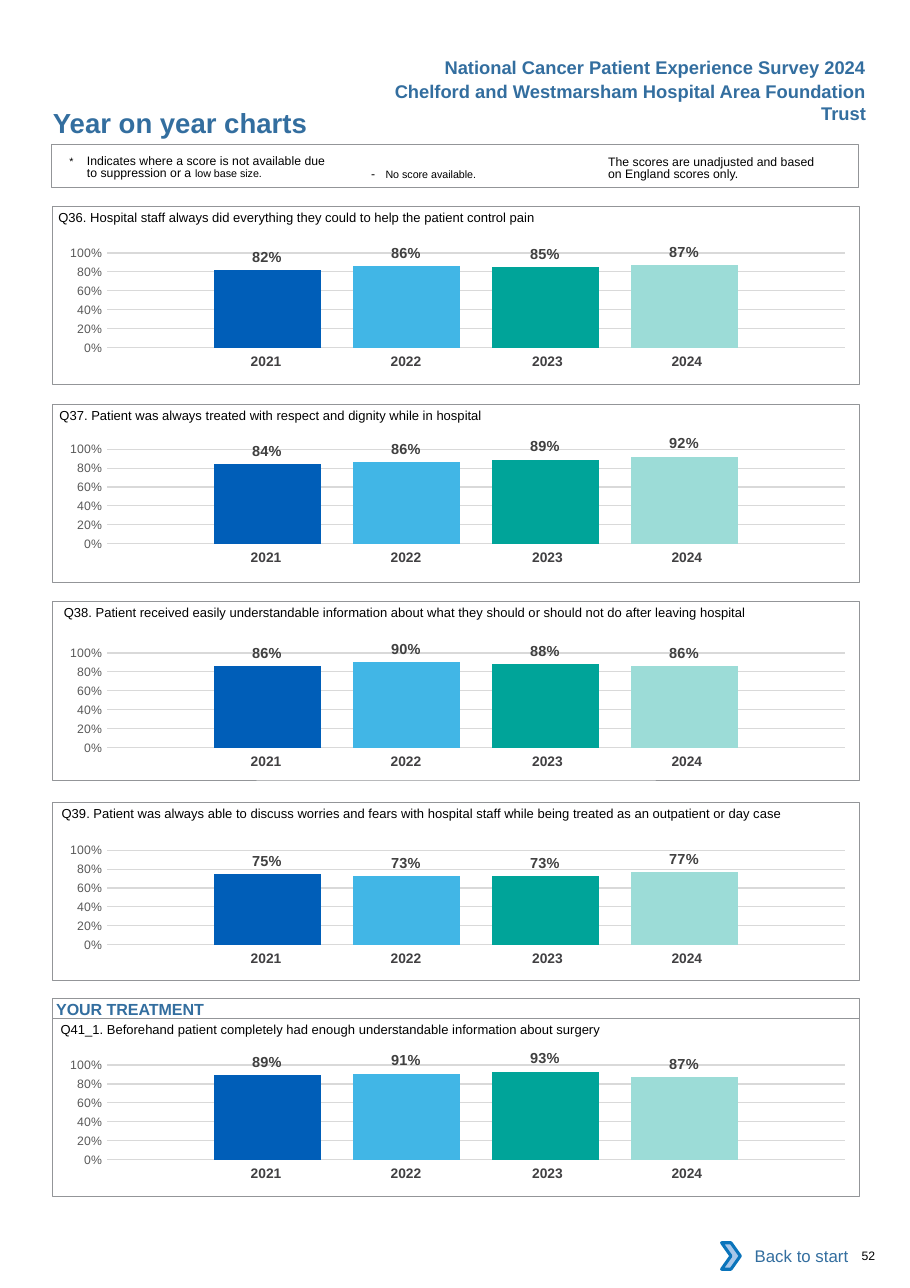
from pptx import Presentation
from pptx.chart.data import CategoryChartData
from pptx.dml.color import RGBColor
from pptx.enum.chart import XL_CHART_TYPE as ChartType, XL_LABEL_POSITION as LabelPos, XL_TICK_MARK as Tick
from pptx.enum.shapes import MSO_SHAPE as Shape
from pptx.enum.text import MSO_ANCHOR as Anchor, PP_ALIGN as Align
from pptx.oxml import parse_xml
from pptx.oxml.ns import nsdecls, qn
from pptx.util import Inches, Pt

BLUE, BLACK, GREY = "336E9F", "000000", "939598"
HEADERS = [
    ("National Cancer Patient Experience Survey 2024", 0.46),
    ("Chelford and Westmarsham Hospital Area Foundation Trust", 0.68),
]
# runs of (text, size), left, top, width, hanging indent
NOTES = [
    ([("*\t", 7), ("Indicates where a score is not available due to suppression or a ", 8),
      ("low base size.", 7)], 0.63, 1.38, 2.4, 0.16),
    ([("-\t", 8), ("No score available.", 7)], 3.37, 1.5, 1.83, 0.13),
    ([("The scores are unadjusted and based on England scores only.", 8)], 5.52, 1.39, 1.97, 0),
]
YEARS = {"2021": "005EB8", "2022": "41B6E6", "2023": "00A499", "2024": "9CDCD7"}
YEAR_COLUMNS = [(1.27, 0), (1.27, 0), (1.34, 0.04), (1.27, 0.12)]  # width, right margin
# question, scores, frame top, chart top, question left
QUESTIONS = [
    ("Q36. Hospital staff always did everything they could to help the patient control pain",
     (0.82, 0.86, 0.85, 0.87), 1.87, 2.11, 0.53),
    ("Q37. Patient was always treated with respect and dignity while in hospital",
     (0.84, 0.86, 0.89, 0.92), 3.67, 3.89, 0.54),
    ("Q38. Patient received easily understandable information about what they should or should not do "
     "after leaving hospital", (0.86, 0.9, 0.88, 0.86), 5.46, 5.74, 0.58),
    ("Q39. Patient was always able to discuss worries and fears with hospital staff while being treated "
     "as an outpatient or day case", (0.75, 0.73, 0.73, 0.77), 7.28, 7.53, 0.56),
    ("Q41_1. Beforehand patient completely had enough understandable information about surgery",
     (0.89, 0.91, 0.93, 0.87), 9.24, 9.48, 0.55),
]
FRAME_LEFT, FRAME_WIDTH, FRAME_HEIGHT = 0.48, 7.32, 1.62
PLOT = {"x": 0.079, "y": 0.145, "w": 0.915, "h": 0.666}
NO_TABLE_STYLE = "{2D5ABB26-0587-4C30-8999-92F81FD0307C}"

prs = Presentation()
prs.slide_width, prs.slide_height = Inches(8.26), Inches(11.69)
slide = prs.slides.add_slide(prs.slide_layouts[5])
shapes = slide.shapes


def rgb(hex_color):
    return RGBColor.from_string(hex_color)


def style_font(font, size, color=BLACK, bold=False, name="Arial"):
    for key, value in {"size": Pt(size), "bold": bold, "name": name}.items():
        setattr(font, key, value)
    font.color.rgb = rgb(color)


def write(frame, text, size, color=BLACK, bold=False, align=Align.LEFT, anchor=Anchor.TOP,
          margins=(0, 0, 0, 0), wrap=True):
    """Fill a text frame with one line or with (text, size) runs; return its paragraph."""
    for side, margin in zip(("left", "top", "right", "bottom"), margins):
        setattr(frame, f"margin_{side}", Inches(margin))
    frame.word_wrap, frame.vertical_anchor = wrap, anchor
    paragraph = frame.paragraphs[0]
    paragraph.alignment = align
    for part, part_size in ([(text, size)] if isinstance(text, str) else text):
        run = paragraph.add_run()
        run.text = part
        style_font(run.font, part_size, color, bold)
    return paragraph


def add_text(box, text, size, **formats):
    return write(shapes.add_textbox(*map(Inches, box)).text_frame, text, size, **formats)


def add_outline(box, preset=Shape.RECTANGLE, fill=None, line=GREY, width=0.5):
    shape = shapes.add_shape(preset, *map(Inches, box))
    shape.shadow.inherit = False
    if fill:
        shape.fill.solid()
        shape.fill.fore_color.rgb = rgb(fill)
    else:
        shape.fill.background()
    if line:
        shape.line.color.rgb = rgb(line)
        shape.line.width = Pt(width)
    else:
        shape.line.fill.background()
    return shape


def add_year_labels(top):
    total = sum(width for width, _ in YEAR_COLUMNS)
    table = shapes.add_table(1, len(YEARS), *map(Inches, (1.73, top, total, 0.27))).table
    table.first_row = table.horz_banding = False
    table._tbl.tblPr.find(qn("a:tableStyleId")).text = NO_TABLE_STYLE
    for i, (year, (width, right)) in enumerate(zip(YEARS, YEAR_COLUMNS)):
        table.columns[i].width = Inches(width)
        cell = table.cell(0, i)
        cell.fill.background()
        cell.margin_right = Inches(right)
        cell.text = year
        paragraph = cell.text_frame.paragraphs[0]
        paragraph.alignment = Align.CENTER
        style_font(paragraph.runs[0].font, 9, "414042", True)


def add_score_chart(top, scores):
    data = CategoryChartData(number_format="0%")
    data.categories = ["1"]
    for i, score in enumerate(scores, 1):
        data.add_series(f"Series {i}", [score])
    chart = shapes.add_chart(ChartType.COLUMN_CLUSTERED,
                             *map(Inches, (0.39, top, 7.32, 1.29)), data).chart
    chart.has_legend = chart.has_title = False
    style_font(chart.font, 10, name="Calibri")
    chart.category_axis.visible = False

    axis = chart.value_axis
    for key, value in {"minimum_scale": 0, "maximum_scale": 1, "major_unit": 0.2,
                       "major_tick_mark": Tick.NONE, "minor_tick_mark": Tick.NONE}.items():
        setattr(axis, key, value)
    axis.format.line.fill.background()
    axis.major_gridlines.format.line.color.rgb = rgb("D9D9D9")
    axis.major_gridlines.format.line.width = Pt(0.75)
    axis.tick_labels.number_format, axis.tick_labels.number_format_is_linked = "0%", False
    style_font(axis.tick_labels.font, 8, "595959")

    plot = chart.plots[0]
    plot.gap_width, plot.overlap, plot.vary_by_categories = 200, -30, False
    for series, color in zip(plot.series, YEARS.values()):
        series.format.fill.solid()
        series.format.fill.fore_color.rgb = rgb(color)
        labels = series.data_labels
        for key, value in {"show_value": True, "position": LabelPos.OUTSIDE_END,
                           "number_format": "0%", "number_format_is_linked": False}.items():
            setattr(labels, key, value)
        style_font(labels.font, 9.5, "404040", True)

    area = chart._chartSpace.chart.plotArea
    for layout in area.findall(qn("c:layout")):
        area.remove(layout)
    sizes = "".join(f'<c:{key} val="{value}"/>' for key, value in PLOT.items())
    area.insert(0, parse_xml(
        f'<c:layout {nsdecls("c")}><c:manualLayout><c:layoutTarget val="inner"/>'
        f'<c:xMode val="edge"/><c:yMode val="edge"/>{sizes}</c:manualLayout></c:layout>'))


title = shapes.title
title.left, title.top, title.width, title.height = map(Inches, (0.48, 0.96, 4.5, 0.3))
write(title.text_frame, "Year on year charts", 18, BLUE, True)

for header, top in HEADERS:
    add_text((3.16, top, 4.8, 0.3), header, 12, color=BLUE, bold=True, align=Align.RIGHT,
             margins=(0.1, 0.05, 0.1, 0.05), wrap=False)

add_outline((0.47, 1.31, FRAME_WIDTH, 0.39), width=0.75)
for runs, left, top, width, indent in NOTES:
    note = add_text((left, top, width, 0.27), runs, 8, margins=(0, 0.03, 0, 0))
    note.line_spacing = Pt(8.1)
    properties = note._p.get_or_add_pPr()
    properties.set("marL", str(Inches(indent)))
    properties.set("indent", str(-Inches(indent)))

for question, scores, frame_top, chart_top, left in QUESTIONS:
    add_score_chart(chart_top, scores)
    add_year_labels(chart_top + 1.05)
    add_text((left, frame_top - 0.06, 7.24, 0.24), question, 8.5, margins=(0, 0.09, 0, 0))
    add_outline((FRAME_LEFT, frame_top, FRAME_WIDTH, FRAME_HEIGHT))

section = add_outline((FRAME_LEFT, 9.06, FRAME_WIDTH, 0.18))
write(section.text_frame, "YOUR TREATMENT", 10.5, BLUE, True, margins=(0.03, 0.01, 0, 0))

back = add_outline((6.62, 11.19, 1.18, 0.42), fill="FFFFFF", line=None)
write(back.text_frame, "Back to start", 11, BLUE, align=Align.RIGHT, anchor=Anchor.MIDDLE,
      margins=(0.1, 0.05, 0.1, 0.05))
add_outline((6.55, 11.28, 0.17, 0.24), Shape.CHEVRON, "A8C7E9", "0A74BB", 2)
add_text((7.82, 11.33, 0.41, 0.13), "52", 8)

prs.save("out.pptx")
